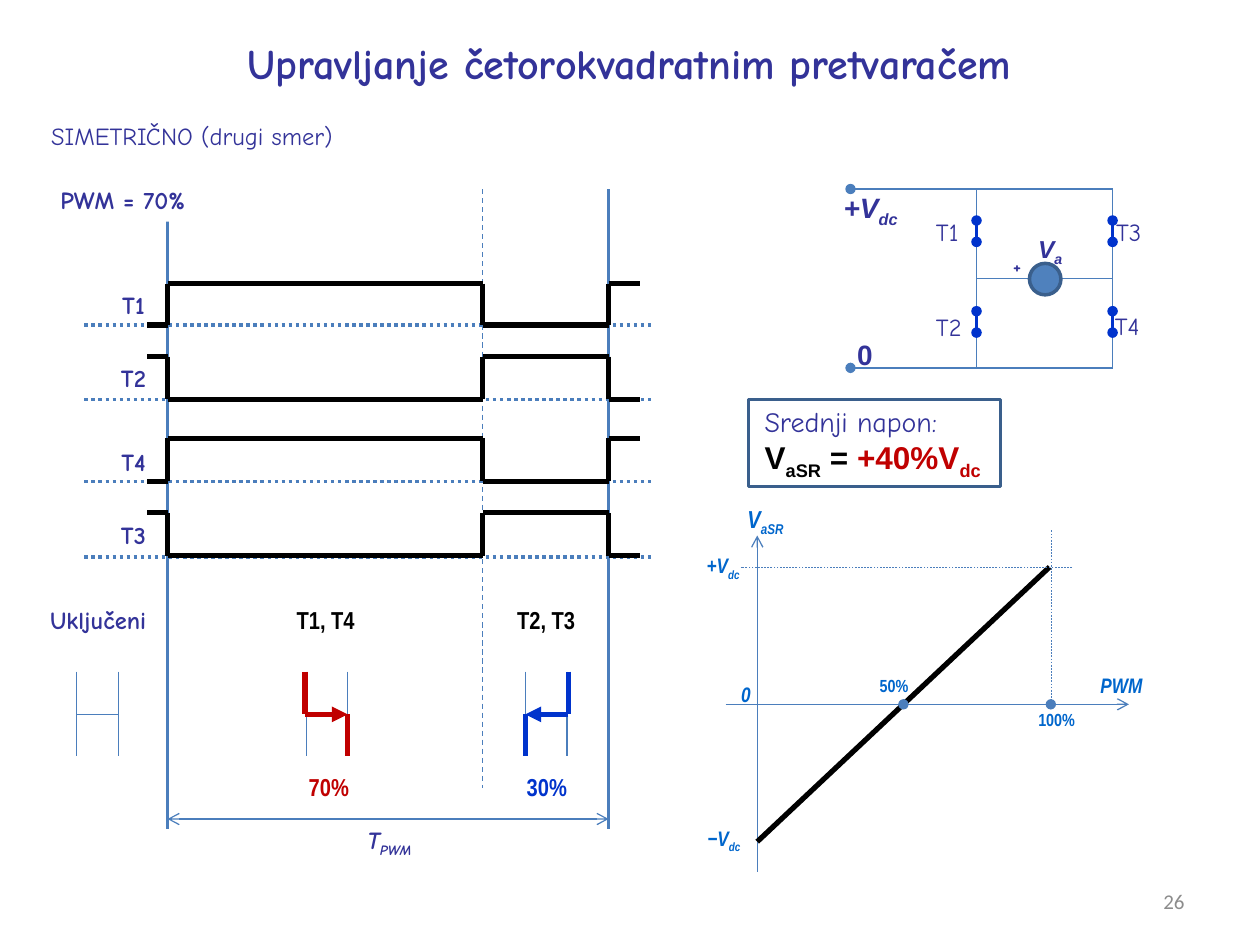
import pptx
import pptx.dml.color
import pptx.enum.dml
import pptx.enum.shapes
import pptx.enum.text
import pptx.oxml.ns
import pptx.util
from lxml import etree

Inches = pptx.util.Inches
Pt = pptx.util.Pt
Align = pptx.enum.text.PP_ALIGN
Dash = pptx.enum.dml.MSO_LINE
Kind = pptx.enum.shapes.MSO_SHAPE
qn = pptx.oxml.ns.qn

COLORS = {
    "white": "FFFFFF", "black": "000000", "wire": "4B7EBC", "border": "3A5F8C",
    "motor": "4F81BD", "title": "333399", "axis": "0066CC", "red": "C00000",
    "blue": "0033CC", "grey": "8C8C8C",
}
COMIC, ARIAL, NARROW = "Comic Neue", "Arial", "Arial Narrow"


def rgb(name):
    return pptx.dml.color.RGBColor.from_string(COLORS[name])


class Painter:
    """Draws styled lines, shapes and labels on the current page."""

    def __init__(self, page):
        self.page = page

    def line(self, x1, y1, x2, y2, color="wire", width=0.75, dash=None, head=None, tail=None):
        link = self.page.shapes.add_connector(
            pptx.enum.shapes.MSO_CONNECTOR.STRAIGHT,
            Inches(x1), Inches(y1), Inches(x2), Inches(y2))
        link.line.color.rgb = rgb(color)
        link.line.width = Pt(width)
        if dash:
            link.line.dash_style = dash
        outline = link._element.spPr.find(qn("a:ln"))
        for tag, end in (("a:headEnd", head), ("a:tailEnd", tail)):
            if end:
                etree.SubElement(outline, qn(tag), type=end)
        etree.SubElement(link._element.spPr, qn("a:effectLst"))

    def shape(self, kind, x, y, w, h, fill=None, border=None):
        shape = self.page.shapes.add_shape(kind, Inches(x), Inches(y), Inches(w), Inches(h))
        shape.shadow.inherit = False
        if fill:
            shape.fill.solid()
            shape.fill.fore_color.rgb = rgb(fill)
        else:
            shape.fill.background()
        if border:
            shape.line.color.rgb = rgb(border)
            shape.line.width = Pt(2)
        else:
            shape.line.fill.background()
        return shape

    def box(self, x, y, w, h, wrap=False):
        box = self.page.shapes.add_textbox(Inches(x), Inches(y), Inches(w), Inches(h))
        box.text_frame.word_wrap = wrap
        return box.text_frame

    def style(self, para, size, font, color, bold=False, italic=False, align=Align.CENTER):
        para.alignment = align
        para.font.size = Pt(size)
        para.font.name = font
        para.font.bold = bold
        para.font.italic = italic
        if color:
            para.font.color.rgb = rgb(color)

    def spans(self, para, markup, color=None):
        for index, part in enumerate(markup.split("_")):
            span = para.add_run()
            span.text = part
            if color:
                span.font.color.rgb = rgb(color)
            if index % 2:
                span._r.get_or_add_rPr().set("baseline", "-25000")

    def label(self, x, y, w, h, markup, size=14, font=COMIC, color="title", wrap=False, **look):
        frame = self.box(x, y, w, h, wrap)
        self.style(frame.paragraphs[0], size, font, color, **look)
        self.spans(frame.paragraphs[0], markup)
        return frame

    def wave(self, high, low, starts_high):
        edges = [1.17, 1.33, 3.83, 4.83, 5.08]
        levels = [high, low] * 2 if starts_high else [low, high] * 2
        for start, end, level in zip(edges, edges[1:], levels):
            self.line(start, level, end, level, "black", 3)
        for edge in edges[1:-1]:
            self.line(edge, high, edge, low, "black", 3)

    def bridge(self, left, top):
        for x in (left, left + 0.33):
            self.line(x, top, x, top + 0.67)
        self.line(left, top + 0.34, left + 0.33, top + 0.34)

    def current(self, x_in, x_out, color):
        self.line(x_in, 5.33, x_in, 5.67, color, 3)
        self.line(x_out, 5.67, x_out, 6, color, 3)
        self.line(x_in, 5.67, x_out, 5.67, color, 3, tail="triangle")


def draw_timing(painter):
    for level in (2.58, 3.17, 3.82, 4.42):
        painter.line(0.67, level, 5.17, level, width=0, dash=Dash.ROUND_DOT)
    painter.line(3.83, 1.5, 3.83, 6.25, dash=Dash.DASH)
    for x in (1.33, 4.83):
        painter.line(x, 1.5, x, 6.58, width=1.25)
    painter.shape(Kind.RECTANGLE, 0.29, 1.42, 1.37, 0.34, fill="white")
    painter.label(0.29, 1.42, 1.37, 0.34, "PWM = 70%", bold=True)
    painter.line(1.33, 6.5, 4.83, 6.5, head="arrow", tail="arrow")
    painter.label(2.73, 6.5, 0.72, 0.34, "T_PWM", bold=True, italic=True)
    signals = [("T1", 2.25, 2.25, 2.58, False), ("T2", 2.83, 2.83, 3.17, True),
               ("T4", 3.5, 3.48, 3.82, False), ("T3", 4.08, 4.07, 4.41, True)]
    for name, top, high, low, starts_high in signals:
        painter.wave(high, low, starts_high)
        painter.label(0.83, top, 0.46, 0.34, name, bold=True)


def draw_switching(painter):
    painter.label(0.25, 4.75, 1.06, 0.34, "Uključeni", bold=True)
    for left in (0.61, 2.43, 4.17):
        painter.bridge(left, 5.33)
    for x, pair in ((2.25, "T1, T4"), (4, "T2, T3")):
        painter.label(x, 4.75, 0.67, 0.34, pair, font=NARROW, color="black", bold=True)
    painter.current(2.42, 2.76, "red")
    painter.current(4.51, 4.17, "blue")
    for x, share, color in ((2.35, "70%", "red"), (4.08, "30%", "blue")):
        painter.label(x, 6.08, 0.52, 0.34, share, font=NARROW, color=color, bold=True)


def draw_circuit(painter):
    for y in (1.5, 2.92):
        painter.line(6.75, y, 8.83, y, head="oval")
    for x in (7.75, 8.83):
        painter.line(x, 1.5, x, 2.92)
    painter.line(7.75, 2.21, 8.83, 2.21)
    painter.shape(Kind.OVAL, 8.17, 2.09, 0.25, 0.25, "motor", "border")
    for x, y, name in ((7.33, 1.67, "T1"), (7.33, 2.43, "T2"), (8.76, 1.67, "T3"), (8.75, 2.42, "T4")):
        painter.label(x, y, 0.58, 0.41, name, wrap=True, align=Align.LEFT)
    painter.label(7.94, 1.97, 0.58, 0.41, "+", 11, wrap=True, bold=True, align=Align.LEFT)
    painter.label(6.56, 1.46, 0.7, 0.37, "+V_dc", 16, ARIAL, bold=True, italic=True)
    painter.label(6.7, 2.63, 0.33, 0.37, "0", 16, ARIAL, bold=True)
    painter.label(8.11, 1.81, 0.45, 0.34, "V_a", 14, ARIAL, bold=True, italic=True)
    for x in (7.75, 8.83):
        for y in (1.75, 2.47):
            painter.line(x, y, x, y + 0.17, "blue", 2, head="oval", tail="oval")


def draw_average(painter):
    frame = painter.label(5.97, 3.16, 1.99, 0.67, "Srednji napon:", 16, align=Align.LEFT)
    para = frame.add_paragraph()
    painter.style(para, 18, ARIAL, None, bold=True, align=Align.LEFT)
    painter.spans(para, "V_aSR_ = ", "black")
    painter.spans(para, "+40%V_dc", "red")
    painter.shape(Kind.RECTANGLE, 5.94, 3.17, 2, 0.69, border="border")


def draw_graph(painter):
    painter.line(5.76, 5.59, 8.96, 5.59, tail="arrow")
    painter.line(6.01, 6.92, 6.01, 4.25, tail="arrow")
    painter.line(8.34, 4.21, 8.34, 5.59, width=0.25, dash=Dash.DASH)
    painter.line(7.17, 5.59, 8.34, 5.59, tail="oval")
    painter.line(6.01, 6.68, 8.33, 4.5, "black", 3)
    painter.line(8.51, 4.5, 5.88, 4.5, width=0.25, dash=Dash.DASH)
    painter.line(6.01, 5.59, 7.17, 5.59, tail="oval")
    labels = [(8.63, 5.29, 0.54, "PWM", 12), (5.82, 3.95, 0.51, "V_aSR", 14),
              (5.5, 4.34, 0.48, "+V_dc", 12), (5.5, 6.5, 0.49, "−V_dc", 12),
              (5.78, 5.36, 0.28, "0", 12)]
    for x, y, w, markup, size in labels:
        painter.label(x, y, w, 0.3, markup, size, NARROW, "axis", bold=True, italic=True)
    for x, y, w, share in ((6.88, 5.31, 0.43, "50%"), (8.14, 5.58, 0.49, "100%")):
        painter.label(x, y, w, 0.27, share, 10, NARROW, "axis", bold=True)


def main():
    deck = pptx.Presentation()
    deck.slide_width, deck.slide_height = Inches(10), Inches(7.5)
    painter = Painter(deck.slides.add_slide(deck.slide_layouts[6]))
    number = painter.label(7.17, 6.95, 2.33, 0.4, "26", 12, "Calibri", "grey", True, align=Align.RIGHT)
    number.vertical_anchor = pptx.enum.text.MSO_ANCHOR.MIDDLE
    painter.label(1.37, 0.25, 7.25, 0.5, "Upravljanje četorokvadratnim pretvaračem", 24, bold=True)
    painter.label(0.14, 0.91, 2.77, 0.34, "SIMETRIČNO (drugi smer)")
    for draw in (draw_timing, draw_switching, draw_circuit, draw_average, draw_graph):
        draw(painter)
    deck.save("out.pptx")


if __name__ == "__main__":
    main()
